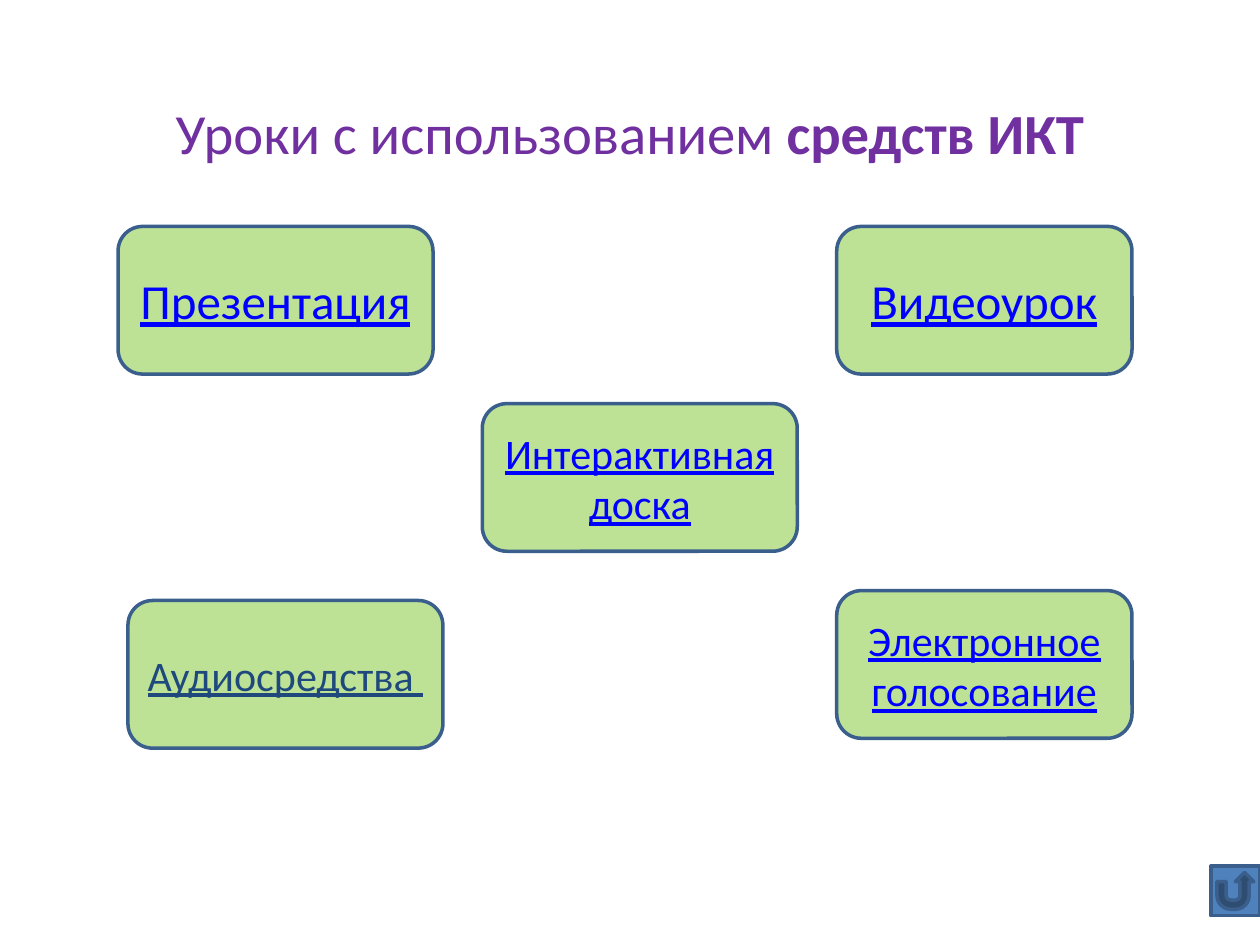
from typing import NamedTuple

from lxml.etree import SubElement
from pptx import Presentation
from pptx.dml.color import RGBColor
from pptx.enum.shapes import MSO_SHAPE as Shape
from pptx.enum.text import MSO_ANCHOR as Anchor, PP_ALIGN as Align
from pptx.oxml.ns import qn
from pptx.util import Inches, Pt

COLS, ROWS = 128, 96
FONT = "Calibri"
GREEN, BLUE, BORDER = "92D050", "4F81BD", "3A5F8C"
PURPLE, LINK, NAVY = "7030A0", "0000FF", "1F497D"


class Area(NamedTuple):
    """Place on the grid, in columns and rows."""
    col: float
    row: float
    cols: float
    rows: float


class Topic(NamedTuple):
    """Labelled rounded box."""
    text: str
    area: Area
    size: float = 24
    color: str = LINK


TOPICS = [
    Topic("Презентация", Area(12, 23, 32, 15), 28),
    Topic("Аудиосредства ", Area(13, 61, 32, 15), color=NAVY),
    Topic("Интерактивная доска", Area(49, 41, 32, 15)),
    Topic("Электронное голосование", Area(85, 60, 30, 15)),
    Topic("Видеоурок", Area(85, 23, 30, 15), 28),
]


def rgb(value: str) -> RGBColor:
    """Turn a hex string into a colour."""
    return RGBColor.from_string(value)


def place(prs, area: Area) -> list[int]:
    """Turn a grid area into left, top, width and height."""
    x, y = prs.slide_width / COLS, prs.slide_height / ROWS
    return [round(v) for v in (area.col * x, area.row * y, area.cols * x, area.rows * y)]


def write(sp, runs: list[tuple[str, bool]], size: float, color: str, underline: bool = False) -> None:
    """Write one centred paragraph of (text, bold) runs."""
    tf = sp.text_frame
    tf.word_wrap = True
    tf.vertical_anchor = Anchor.MIDDLE
    p = tf.paragraphs[0]
    p.alignment = Align.CENTER
    p.font.name, p.font.size = FONT, Pt(size)
    p.font.color.rgb = rgb(color)
    p.font.underline = underline
    for text, bold in runs:
        r = p.add_run()
        r.text = text
        r.font.bold = bold


def add_box(prs, s, kind: Shape, area: Area, fill: str, opacity: int = 100):
    """Draw a filled, outlined preset shape."""
    sp = s.shapes.add_shape(kind, *place(prs, area))
    sp.shadow.inherit = False
    sp.fill.solid()
    sp.fill.fore_color.rgb = rgb(fill)
    if opacity < 100:
        clr = sp.fill._xPr.find(f".//{qn('a:srgbClr')}")
        SubElement(clr, qn("a:alpha"), val=str(opacity * 1000))
    sp.line.color.rgb = rgb(BORDER)
    sp.line.width = Pt(2)
    return sp


def add_topic(prs, s, topic: Topic) -> None:
    """Draw one topic box with its underlined label."""
    sp = add_box(prs, s, Shape.ROUNDED_RECTANGLE, topic.area, GREEN, 60)
    write(sp, [(topic.text, False)], topic.size, topic.color, underline=True)


def main() -> None:
    """Build and save the slide."""
    prs = Presentation()
    prs.slide_width, prs.slide_height = Inches(10), Inches(7.5)
    s = prs.slides.add_slide(prs.slide_layouts[6])
    title = s.shapes.add_textbox(*place(prs, Area(6.4, 7, 115.2, 12.8)))
    write(title, [("Уроки с использованием ", False), ("средств ИКТ", True)], 32.4, PURPLE)
    for topic in TOPICS:
        add_topic(prs, s, topic)
    add_box(prs, s, Shape.ACTION_BUTTON_RETURN, Area(123, 88, 5, 5), BLUE)
    prs.save("out.pptx")


if __name__ == "__main__":
    main()
